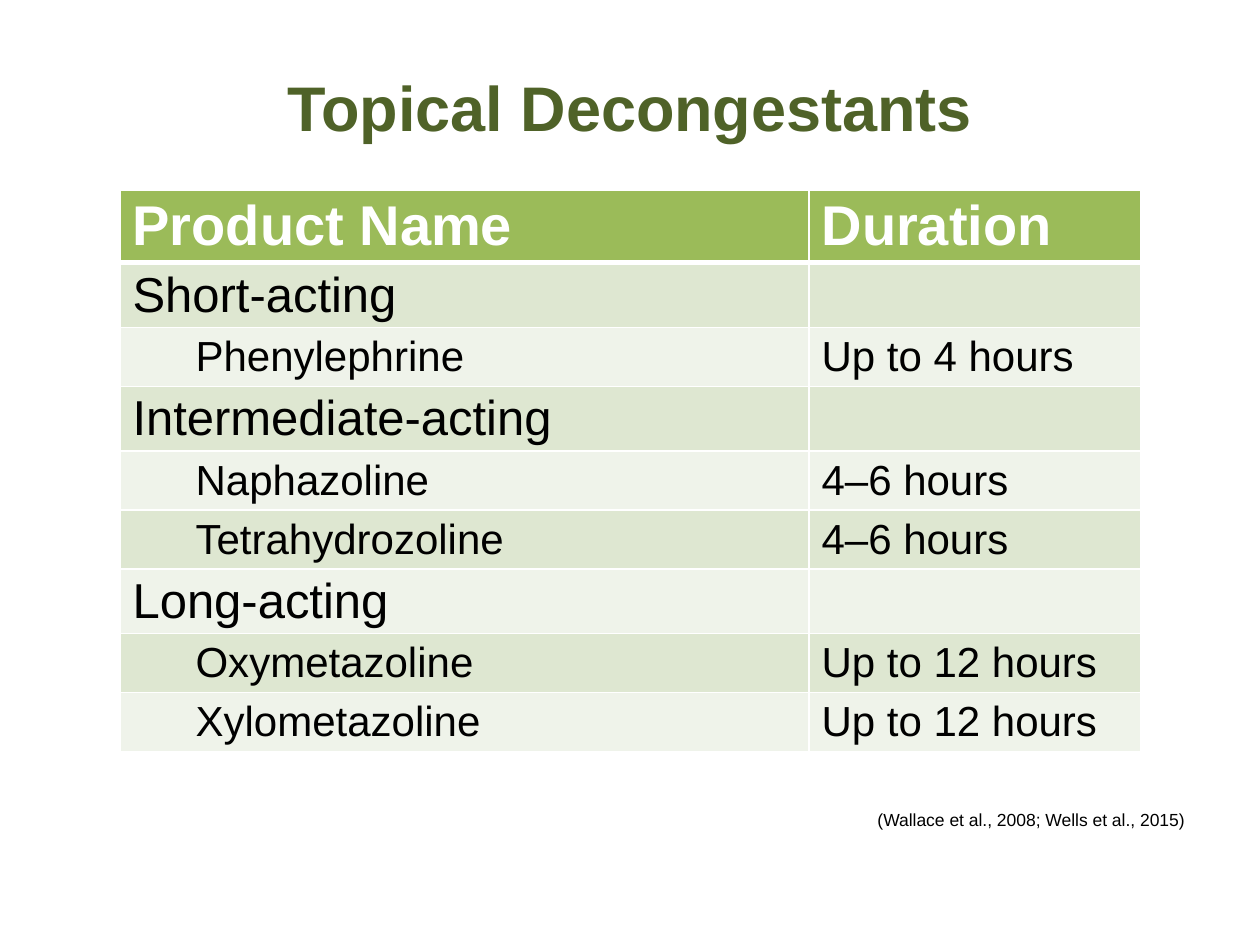
"""Build the Topical Decongestants slide: a title, a product table and a citation."""
import pptx
import pptx.dml.color
import pptx.enum.text
import pptx.oxml
import pptx.oxml.ns
import pptx.util

RGB = pptx.dml.color.RGBColor
ALIGN = pptx.enum.text.PP_ALIGN
ANCHOR = pptx.enum.text.MSO_ANCHOR

TITLE = "Topical Decongestants"
HEADER = ("Product Name", "Duration")
GROUPS = [
    ("Short-acting", [("Phenylephrine", "Up to 4 hours")]),
    ("Intermediate-acting", [("Naphazoline", "4–6 hours"),
                             ("Tetrahydrozoline", "4–6 hours")]),
    ("Long-acting", [("Oxymetazoline", "Up to 12 hours"),
                     ("Xylometazoline", "Up to 12 hours")]),
]
CITATION = "(Wallace et al., 2008; Wells et al., 2015)"

FONT = "Arial"
DARK_GREEN = RGB(0x4F, 0x62, 0x28)
GREEN = RGB(0x9B, 0xBB, 0x59)
BANDS = (RGB(0xDE, 0xE7, 0xD1), RGB(0xEF, 0xF3, 0xEA))
WHITE = RGB(0xFF, 0xFF, 0xFF)
BLACK = RGB(0, 0, 0)

PX = 914400 // 126
TITLE_BOX = (63, 33, 1134, 157)
TABLE_AT = (120, 190)
COLUMNS = (689, 332)
ROW_HEIGHT = 59
CELL_MARGIN = 5
INDENT = 63
CITATION_BOX = (823, 787, 374, 49)


def px(n):
    return pptx.util.Emu(n * PX)


def write(tf, text, size, color=BLACK, bold=False, align=ALIGN.LEFT, level=0):
    p = tf.paragraphs[0]
    p.alignment = align
    if level:
        p.level = level
        pPr = p._p.get_or_add_pPr()
        pPr.set("marL", str(px(INDENT * level)))
        pPr.set("indent", "0")
    r = p.add_run()
    r.text = text
    r.font.name = FONT
    r.font.size = pptx.util.Pt(size)
    r.font.bold = bold
    r.font.color.rgb = color
    return p


def style_cell(cell, fill, anchor, bottom):
    cell.vertical_anchor = anchor
    cell.margin_top = cell.margin_bottom = px(CELL_MARGIN)
    tcPr = cell._tc.get_or_add_tcPr()
    for side, width in (("L", 1), ("R", 1), ("T", 1), ("B", bottom)):
        tcPr.append(pptx.oxml.parse_xml(
            f'<a:ln{side} {pptx.oxml.ns.nsdecls("a")} w="{pptx.util.Pt(width)}">'
            f'<a:solidFill><a:srgbClr val="{WHITE}"/></a:solidFill></a:ln{side}>'))
    cell.fill.solid()
    cell.fill.fore_color.rgb = fill


def add_title(slide):
    sp = slide.shapes.title
    sp.left, sp.top, sp.width, sp.height = map(px, TITLE_BOX)
    sp.text_frame.vertical_anchor = ANCHOR.MIDDLE
    p = write(sp.text_frame, TITLE, 36, color=DARK_GREEN, bold=True, align=ALIGN.CENTER)
    p.line_spacing = 0.9


def add_products(slide):
    rows = [(HEADER, dict(size=32, color=WHITE, bold=True), 0)]
    for group, products in GROUPS:
        rows.append(((group, ""), dict(size=28), 0))
        rows += [(product, dict(size=24), 1) for product in products]

    size = (sum(COLUMNS), ROW_HEIGHT * len(rows))
    table = slide.shapes.add_table(len(rows), len(COLUMNS), *map(px, TABLE_AT + size)).table
    for column, width in zip(table.columns, COLUMNS):
        column.width = px(width)
    for i, (texts, style, level) in enumerate(rows):
        table.rows[i].height = px(ROW_HEIGHT)
        fill = BANDS[(i - 1) % 2] if i else GREEN
        anchor = ANCHOR.MIDDLE if i else ANCHOR.BOTTOM
        for j, text in enumerate(texts):
            cell = table.cell(i, j)
            style_cell(cell, fill, anchor, bottom=1 if i else 3)
            if i == 1:
                cell._tc.tcPr.find(pptx.oxml.ns.qn("a:lnT")).set("w", str(pptx.util.Pt(3)))
            if text:
                write(cell.text_frame, text, level=0 if j else level, **style)


def add_citation(slide):
    tf = slide.shapes.add_textbox(*map(px, CITATION_BOX)).text_frame
    tf.word_wrap = True
    tf.vertical_anchor = ANCHOR.BOTTOM
    write(tf, CITATION, 10, align=ALIGN.RIGHT)


def main():
    prs = pptx.Presentation()
    prs.slide_width, prs.slide_height = px(1260), px(945)
    slide = prs.slides.add_slide(prs.slide_layouts[5])
    add_title(slide)
    add_products(slide)
    add_citation(slide)
    prs.save("out.pptx")


if __name__ == "__main__":
    main()
